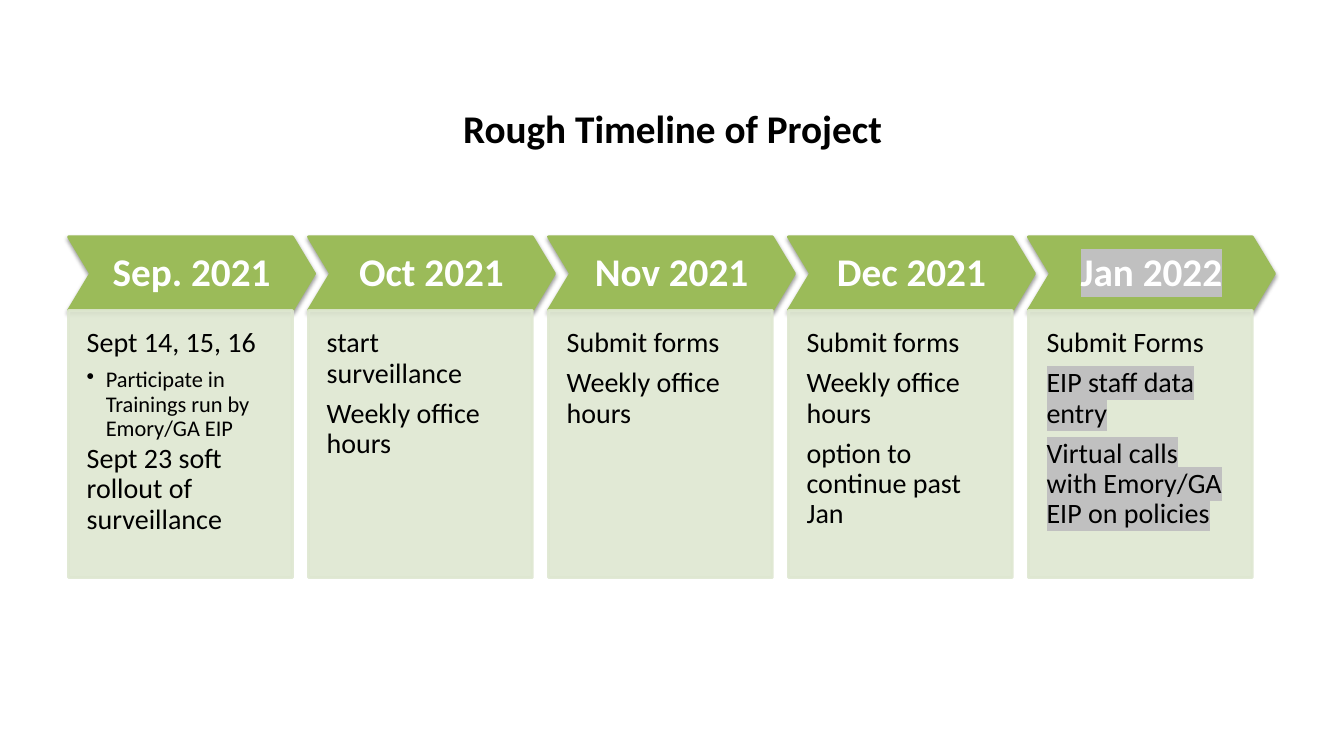
from lxml import etree
from pptx import Presentation
from pptx import util as u
from pptx.dml.color import RGBColor
from pptx.enum import shapes, text
from pptx.oxml import ns

COLOURS = {
    "green": "9BBB59",
    "pale": "DEE7D1",
    "black": "000000",
    "white": "FFFFFF",
    "grey": "C0C0C0",
}
LEFT, PITCH = 0.68, 2.38
ARROW_TOP, ARROW_WIDTH, ARROW_HEIGHT = 2.35, 2.44, 0.73
PANEL_TOP, PANEL_WIDTH, PANEL_HEIGHT = 3.08, 2.22, 2.65

# Each month: heading, heading marked, items as (wording, style)
MONTHS = [
    ("Sep. 2021", False, [
        ("Sept 14, 15, 16", "plain"),
        ("Participate in Trainings run by Emory/GA EIP", "bullet"),
        ("Sept 23 soft rollout of surveillance", "plain")]),
    ("Oct 2021", False, [
        ("start surveillance", "plain"),
        ("Weekly office hours", "plain")]),
    ("Nov 2021", False, [
        ("Submit forms", "plain"),
        ("Weekly office hours", "plain")]),
    ("Dec 2021", False, [
        ("Submit forms", "plain"),
        ("Weekly office hours", "plain"),
        ("option to continue past Jan", "plain")]),
    ("Jan 2022", True, [
        ("Submit Forms", "plain"),
        ("EIP staff data entry", "marked"),
        ("Virtual calls with Emory/GA EIP on policies", "marked")]),
]


def rgb(name):
    return RGBColor.from_string(COLOURS[name])


def add_xml(parent, tag, **attributes):
    return etree.SubElement(parent, ns.qn(tag), attributes)


def set_insets(frame, left, top, right, bottom):
    frame.margin_left, frame.margin_top = u.Inches(left), u.Inches(top)
    frame.margin_right, frame.margin_bottom = u.Inches(right), u.Inches(bottom)
    frame.word_wrap = True


def write(para, wording, size, colour="black", bold=False, marked=False):
    span = para.add_run()
    span.text = wording
    if marked:
        highlight = add_xml(span.font._element, "a:highlight")
        add_xml(highlight, "a:srgbClr", val=COLOURS["grey"])
    para.font.name = "Calibri"
    para.font.size = u.Pt(size)
    para.font.bold = bold
    para.font.color.rgb = rgb(colour)


def add_bullet(para):
    properties = para._p.get_or_add_pPr()
    indent = u.Inches(0.19)
    properties.set("marL", str(indent))
    properties.set("indent", str(-indent))
    add_xml(properties, "a:buChar", char="•")


def add_box(page, kind, left, top, width, height, colour):
    box = page.shapes.add_shape(kind, u.Inches(left), u.Inches(top),
                                u.Inches(width), u.Inches(height))
    box.fill.solid()
    box.fill.fore_color.rgb = rgb(colour)
    box.line.color.rgb = rgb(colour)
    box.line.width = u.Pt(2)
    box.shadow.inherit = False
    return box


def add_shadow(box):
    effects = box._element.spPr.find(ns.qn("a:effectLst"))
    shadow = add_xml(effects, "a:outerShdw", blurRad=str(u.Pt(3.1)),
                     dist=str(u.Pt(1.6)), dir="5400000", rotWithShape="0")
    shade = add_xml(shadow, "a:srgbClr", val=COLOURS["black"])
    add_xml(shade, "a:alpha", val="38000")


def add_title(page, wording):
    box = page.shapes.add_textbox(u.Inches(0.67), u.Inches(0.3),
                                  u.Inches(12), u.Inches(1.25))
    frame = box.text_frame
    frame.word_wrap = True
    frame.vertical_anchor = text.MSO_ANCHOR.BOTTOM
    para = frame.paragraphs[0]
    para.alignment = text.PP_ALIGN.CENTER
    para.line_spacing = u.Pt(30)
    write(para, wording, 28, bold=True)


def add_month_arrow(page, left, month, marked):
    arrow = add_box(page, shapes.MSO_SHAPE.CHEVRON, left, ARROW_TOP,
                    ARROW_WIDTH, ARROW_HEIGHT, "green")
    arrow.adjustments[0] = 0.3
    add_shadow(arrow)
    frame = arrow.text_frame
    set_insets(frame, 0.09, 0.09, 0.09, 0.09)
    frame.vertical_anchor = text.MSO_ANCHOR.MIDDLE
    para = frame.paragraphs[0]
    para.alignment = text.PP_ALIGN.CENTER
    para.line_spacing = 0.9
    write(para, month, 28, "white", bold=True, marked=marked)


def add_task_panel(page, left, items):
    panel = add_box(page, shapes.MSO_SHAPE.RECTANGLE, left, PANEL_TOP,
                    PANEL_WIDTH, PANEL_HEIGHT, "pale")
    for colour in panel._element.spPr.iter(ns.qn("a:srgbClr")):
        add_xml(colour, "a:alpha", val="90000")
    frame = panel.text_frame
    set_insets(frame, 0.18, 0.18, 0.18, 0.35)
    frame.vertical_anchor = text.MSO_ANCHOR.TOP
    for index, (wording, style) in enumerate(items):
        para = frame.add_paragraph() if index else frame.paragraphs[0]
        is_bullet = style == "bullet"
        para.alignment = text.PP_ALIGN.LEFT
        para.line_spacing = 0.9
        para.space_after = u.Pt(2.4 if is_bullet else 7)
        if is_bullet:
            para.level = 1
            add_bullet(para)
        write(para, wording, 16 if is_bullet else 20, marked=style == "marked")


def main():
    deck = Presentation()
    deck.slide_width, deck.slide_height = u.Inches(13.33), u.Inches(7.5)
    page = deck.slides.add_slide(deck.slide_layouts[6])
    add_title(page, "Rough Timeline of Project")
    for index, (month, marked, items) in enumerate(MONTHS):
        left = LEFT + index * PITCH
        add_month_arrow(page, left, month, marked)
        add_task_panel(page, left, items)
    deck.save("out.pptx")


if __name__ == "__main__":
    main()
